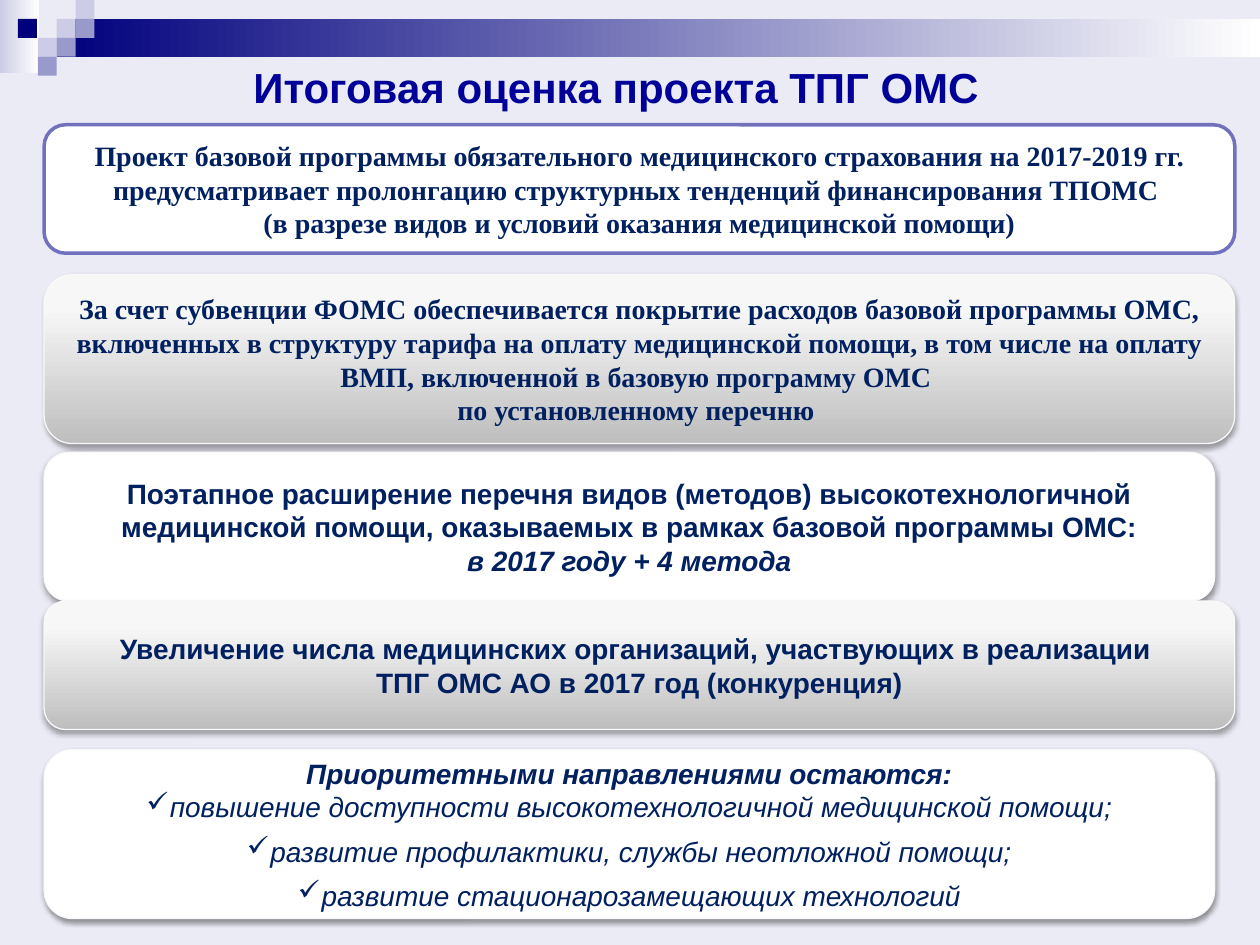
from copy import deepcopy
from dataclasses import dataclass
from typing import Optional

from lxml.etree import SubElement
from pptx import Presentation
from pptx.dml.color import RGBColor as Color
from pptx.enum.shapes import MSO_SHAPE as Shape
from pptx.enum.text import MSO_ANCHOR as Anchor, MSO_AUTO_SIZE as AutoSize, PP_ALIGN as Align
from pptx.oxml.ns import qn
from pptx.util import Pt

COLORS = {
    "background": "EBEBF5", "navy": "00007D", "lilac": "CCCCE6", "violet": "9999CC",
    "white": "FFFFFF", "title": "000099", "text": "002060", "frame": "7171BD",
    "edge": "F9F9F9", "gray": "BEBEBE", "pale": "F7F7F7", "paler": "F8F8F8", "black": "000000",
}
SILVER = ((0, "gray"), (80, "pale"), (100, "paler"))
SQUARE = 10.8
LEFT = 25.2
WIDE, NARROW = 680.4, 668.9
LOW, MIDDLE, HIGH = 73.4, 85, 96.5
SERIF, SANS = "Times New Roman", "Arial"


@dataclass
class Line:
    text: str
    bold: bool = True
    italic: bool = False
    bullet: bool = False


@dataclass
class Panel:
    top: float
    width: float
    height: float
    font: str
    lines: list[Line]
    silver: bool = False
    edge: str = "edge"
    edge_width: float = 0.75
    shadow: Optional[tuple[int, float]] = (38, 1.6)


SQUARES = [
    (3, 1, "lilac"), (4, 0, "lilac"), (4, 1, "violet"), (2, 2, "lilac"),
    (0.95, 1, "navy"), (3, 2, "violet"), (2, 3, "violet"),
]
PANELS = [
    Panel(157, WIDE, HIGH, SERIF, [Line(
        "За счет субвенции ФОМС обеспечивается покрытие расходов базовой программы ОМС, "
        "включенных в структуру тарифа на оплату медицинской помощи, в том числе на оплату "
        "ВМП, включенной в базовую программу ОМС \vпо установленному перечню ")],
        silver=True, shadow=(35, 1.8)),
    Panel(258.5, NARROW, MIDDLE, SANS, [
        Line("Поэтапное расширение перечня видов (методов) высокотехнологичной "
             "медицинской помощи, оказываемых в рамках базовой программы ОМС:"),
        Line("в 2017 году + 4 метода", italic=True)]),
    Panel(71.3, WIDE, LOW, SERIF, [Line(
        "Проект базовой программы обязательного медицинского страхования на 2017-2019 гг. "
        "предусматривает пролонгацию структурных тенденций финансирования ТПОМС "
        "\v(в разрезе видов и условий оказания медицинской помощи)")],
        edge="frame", edge_width=2, shadow=None),
    Panel(343.5, WIDE, LOW, SANS, [Line(
        "Увеличение числа медицинских организаций, участвующих в реализации "
        "\vТПГ ОМС АО в 2017 год (конкуренция)")],
        silver=True, shadow=(35, 1.8)),
    Panel(428.4, NARROW, HIGH, SANS, [
        Line("Приоритетными направлениями остаются:", italic=True),
        *(Line(text, bold=False, italic=True, bullet=True) for text in (
            "повышение доступности высокотехнологичной медицинской помощи;",
            "развитие профилактики, службы неотложной помощи;",
            "развитие стационарозамещающих технологий"))]),
]


def rgb(name: str) -> Color:
    return Color.from_string(COLORS[name])


def fill_solid(fill, color: str) -> None:
    fill.solid()
    fill.fore_color.rgb = rgb(color)


def fill_gradient(shape, stops, angle: float) -> None:
    shape.fill.gradient()
    shape.fill.gradient_angle = angle
    stop_list = shape.element.spPr.find(qn("a:gradFill")).find(qn("a:gsLst"))
    for stop in list(stop_list):
        stop_list.remove(stop)
    for position, color in stops:
        stop = SubElement(stop_list, qn("a:gs"), pos=str(position * 1000))
        SubElement(stop, qn("a:srgbClr"), val=COLORS[color])


def add_block(slide, kind, left: float, top: float, width: float, height: float):
    shape = slide.shapes.add_shape(kind, Pt(left), Pt(top), Pt(width), Pt(height))
    shape.shadow.inherit = False
    shape.line.fill.background()
    return shape


def add_shadow(shape, alpha: int, distance: float) -> None:
    effects = shape.element.spPr.find(qn("a:effectLst"))
    shadow = SubElement(effects, qn("a:outerShdw"), blurRad=str(Pt(3.1)),
                        dist=str(Pt(distance)), dir="5400000", rotWithShape="0")
    color = SubElement(shadow, qn("a:srgbClr"), val=COLORS["black"])
    SubElement(color, qn("a:alpha"), val=str(alpha * 1000))


def add_check_mark(paragraph) -> None:
    paragraph.space_after = Pt(6)
    properties = paragraph._p.get_or_add_pPr()
    properties.set("marL", str(Pt(13.5)))
    properties.set("indent", str(Pt(-13.5)))
    SubElement(properties, qn("a:buChar"), char="✓")


def write_line(paragraph, line: Line, font: str, size: float, color: str) -> None:
    paragraph.text = line.text
    paragraph.alignment = Align.CENTER
    values = {"name": font, "size": Pt(size), "bold": line.bold, "italic": line.italic}
    for run in paragraph.runs:
        for name, value in values.items():
            setattr(run.font, name, value)
        run.font.color.rgb = rgb(color)
    for line_break in paragraph._p.findall(qn("a:br")):
        line_break.append(deepcopy(paragraph.runs[0]._r.rPr))
    if line.bullet:
        add_check_mark(paragraph)


def draw_panel(slide, panel: Panel) -> None:
    shape = add_block(slide, Shape.ROUNDED_RECTANGLE, LEFT, panel.top, panel.width, panel.height)
    if panel.silver:
        fill_gradient(shape, SILVER, 90)
    else:
        fill_solid(shape.fill, "white")
    fill_solid(shape.line.fill, panel.edge)
    shape.line.width = Pt(panel.edge_width)
    if panel.shadow:
        add_shadow(shape, *panel.shadow)
    frame = shape.text_frame
    frame.word_wrap = True
    frame.vertical_anchor = Anchor.MIDDLE
    for index, line in enumerate(panel.lines):
        paragraph = frame.add_paragraph() if index else frame.paragraphs[0]
        write_line(paragraph, line, panel.font, 16, "text")


def draw_header(slide) -> None:
    corner = add_block(slide, Shape.RECTANGLE, 0, 0, 22.3, 41.8)
    fill_gradient(corner, ((0, "lilac"), (100, "white")), 0)
    bar = add_block(slide, Shape.RECTANGLE, 3 * SQUARE, SQUARE, 687.6, 2 * SQUARE)
    fill_gradient(bar, ((0, "navy"), (100, "white")), 0)
    for column, row, color in SQUARES:
        square = add_block(slide, Shape.RECTANGLE, column * SQUARE, row * SQUARE, SQUARE, SQUARE)
        fill_solid(square.fill, color)


def write_title(slide) -> None:
    title = slide.shapes.title
    place = {"left": 48.2, "top": 31.7, "width": 607.7, "height": 36}
    for name, value in place.items():
        setattr(title, name, Pt(value))
    frame = title.text_frame
    frame.word_wrap = True
    frame.auto_size = AutoSize.SHAPE_TO_FIT_TEXT
    frame.vertical_anchor = Anchor.TOP
    write_line(frame.paragraphs[0], Line("Итоговая оценка проекта ТПГ ОМС"), SANS, 24, "title")


def main() -> None:
    presentation = Presentation()
    presentation.slide_width, presentation.slide_height = Pt(720), Pt(540)
    slide = presentation.slides.add_slide(presentation.slide_layouts[5])
    fill_solid(slide.background.fill, "background")
    draw_header(slide)
    write_title(slide)
    for panel in PANELS:
        draw_panel(slide, panel)
    presentation.save("out.pptx")


if __name__ == "__main__":
    main()
